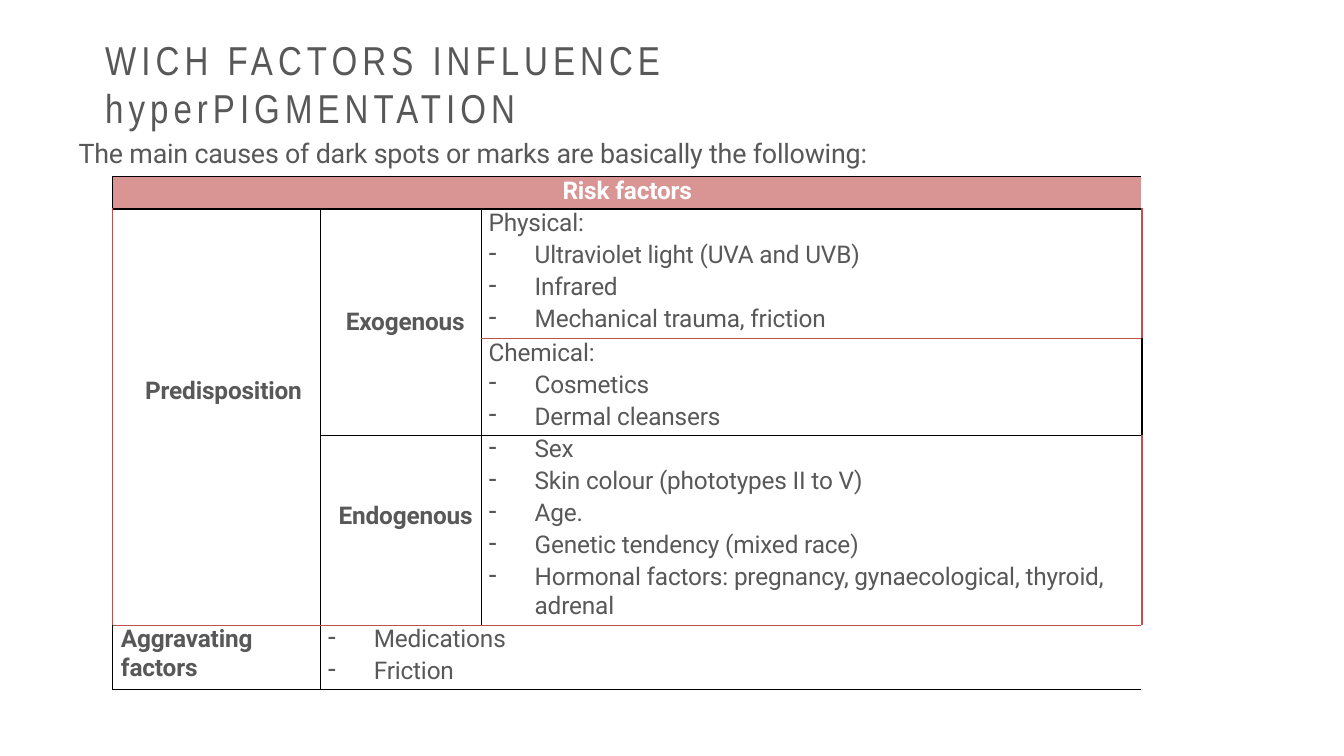
import pptx
import pptx.dml.color
import pptx.enum.text
import pptx.oxml
import pptx.oxml.ns
import pptx.util

Inches, Pt = pptx.util.Inches, pptx.util.Pt
RGBColor = pptx.dml.color.RGBColor
Anchor = pptx.enum.text.MSO_ANCHOR
Align = pptx.enum.text.PP_ALIGN

GREY = RGBColor(0x58, 0x58, 0x58)
WHITE = RGBColor(0xFF, 0xFF, 0xFF)
ROSE = RGBColor(0xD9, 0x95, 0x93)
RED = RGBColor(0xC0, 0x50, 0x4D)
BLACK = RGBColor(0, 0, 0)

# Content
TITLE = "WICH FACTORS INFLUENCE hyperPIGMENTATION"
INTRO = "The main causes of dark spots or marks are basically the following:"
COLUMN_WIDTHS = [1.72, 1.33, 5.46]
ROW_HEIGHTS = [0.27, 1.07, 0.8, 1.57, 0.53]

# One letter per table area; an area of several letters is merged
AREAS = ["hhh", "pxy", "pxc", "pns", "amm"]
LABELS = {  # text, left indent, bottom margin, anchor
    "h": ("Risk factors", 0, 0, Anchor.TOP),
    "p": ("Predisposition", 0.27, 0.43, Anchor.MIDDLE),
    "x": ("Exogenous", 0.21, 0, Anchor.MIDDLE),
    "n": ("Endogenous", 0.15, 0.23, Anchor.MIDDLE),
    "a": ("Aggravating factors", 0.07, 0, Anchor.TOP),
}
LISTS = {  # heading, items
    "y": ("Physical:", ["Ultraviolet light (UVA and UVB)", "Infrared",
                        "Mechanical trauma, friction"]),
    "c": ("Chemical:", ["Cosmetics", "Dermal cleansers"]),
    "s": (None, ["Sex", "Skin colour (phototypes II to V)", "Age.",
                 "Genetic tendency (mixed race)",
                 "Hormonal factors: pregnancy, gynaecological, thyroid, adrenal"]),
    "m": (None, ["Medications", "Friction"]),
}
RED_EDGES = {"p": "LB", "y": "RB", "c": "T", "n": "B", "s": "RB", "a": "T", "m": "T"}
NEIGHBOURS = {"L": (0, -1), "R": (0, 1), "T": (-1, 0), "B": (1, 0)}


def add_text(paragraph, text, size, font="Roboto", color=GREY, bold=False, spacing=-0.1):
    run = paragraph.add_run()
    run.text = text
    run.font.size, run.font.name, run.font.bold = Pt(size), font, bold
    run.font.color.rgb = color
    run._r.get_or_add_rPr().set("spc", str(round(spacing * 100)))


def indent(paragraph, left, first=0.0, bullet=None):
    properties = paragraph._p.get_or_add_pPr()
    properties.set("marL", str(Inches(left)))
    properties.set("indent", str(Inches(first)))
    if bullet:
        mark = pptx.oxml.parse_xml(
            f'<a:buChar {pptx.oxml.ns.nsdecls("a")} char="{bullet}"/>')
        properties.append(mark)


def set_margins(box, top=0.0, bottom=0.0, right=0.0):
    box.margin_left, box.margin_top = 0, Inches(top)
    box.margin_right, box.margin_bottom = Inches(right), Inches(bottom)


def area_at(row, column):
    inside = 0 <= row < len(AREAS) and 0 <= column < len(COLUMN_WIDTHS)
    return AREAS[row][column] if inside else None


def add_borders(cell, row, column):
    area = area_at(row, column)
    position = 0
    for side, (down, across) in NEIGHBOURS.items():
        if area_at(row + down, column + across) == area:
            continue
        color = RED if side in RED_EDGES.get(area, "") else BLACK
        line = pptx.oxml.parse_xml(
            f'<a:ln{side} {pptx.oxml.ns.nsdecls("a")} w="{Pt(1)}"><a:solidFill>'
            f'<a:srgbClr val="{color}"/></a:solidFill></a:ln{side}>')
        cell._tc.get_or_add_tcPr().insert(position, line)
        position += 1


def fill_label(cell, area):
    text, left, bottom, anchor = LABELS[area]
    set_margins(cell, bottom=bottom, right=0.1 if area == "a" else 0)
    cell.vertical_anchor = anchor
    paragraph = cell.text_frame.paragraphs[0]
    indent(paragraph, left)
    if area == "h":
        paragraph.alignment = Align.CENTER
    add_text(paragraph, text, 14.5, color=WHITE if area == "h" else GREY, bold=True)


def fill_list(cell, area):
    heading, items = LISTS[area]
    lines = ([(heading, False)] if heading else []) + [(item, True) for item in items]
    for number, (text, bulleted) in enumerate(lines):
        frame = cell.text_frame
        paragraph = frame.add_paragraph() if number else frame.paragraphs[0]
        if number:
            paragraph.space_before = Pt(2)
        if bulleted:
            indent(paragraph, 0.44, -0.38, "-")
        else:
            indent(paragraph, 0.06)
        add_text(paragraph, text, 14.5)


presentation = pptx.Presentation()
presentation.slide_width, presentation.slide_height = Inches(11.11), Inches(6.25)
slide = presentation.slides.add_slide(presentation.slide_layouts[5])

# Title
title = slide.shapes.title
title.left, title.top = Inches(0.86), Inches(0.47)
title.width, title.height = Inches(6.53), Inches(0.42)
title.fill.solid()
title.fill.fore_color.rgb = WHITE
frame = title.text_frame
set_margins(frame, top=0.02)
frame.word_wrap = True
frame.auto_size = pptx.enum.text.MSO_AUTO_SIZE.SHAPE_TO_FIT_TEXT
frame.vertical_anchor = Anchor.MIDDLE
frame.paragraphs[0].alignment = Align.LEFT
indent(frame.paragraphs[0], 0.01)
add_text(frame.paragraphs[0], TITLE, 24, font="Arial Narrow", spacing=3)

# Introduction
intro = slide.shapes.add_textbox(Inches(0.64), Inches(1.11), Inches(9.08), Inches(0.28))
set_margins(intro.text_frame, top=0.02)
intro.text_frame.word_wrap = True
indent(intro.text_frame.paragraphs[0], 0.01)
add_text(intro.text_frame.paragraphs[0], INTRO, 16)

# Risk factor table
table = slide.shapes.add_table(
    len(ROW_HEIGHTS), len(COLUMN_WIDTHS), Inches(0.93), Inches(1.46),
    Inches(sum(COLUMN_WIDTHS)), Inches(sum(ROW_HEIGHTS))).table
table.first_row = table.horz_banding = False
for column, width in zip(table.columns, COLUMN_WIDTHS):
    column.width = Inches(width)
for row, height in zip(table.rows, ROW_HEIGHTS):
    row.height = Inches(height)

places = {}
for row, letters in enumerate(AREAS):
    for column, area in enumerate(letters):
        cell = table.cell(row, column)
        set_margins(cell)
        cell.fill.solid()
        cell.fill.fore_color.rgb = ROSE if area == "h" else WHITE
        add_borders(cell, row, column)
        places.setdefault(area, []).append(cell)

for area, cells in places.items():
    if len(cells) > 1:
        cells[0].merge(cells[-1])
    if area in LABELS:
        fill_label(cells[0], area)
    else:
        fill_list(cells[0], area)

presentation.save("out.pptx")
